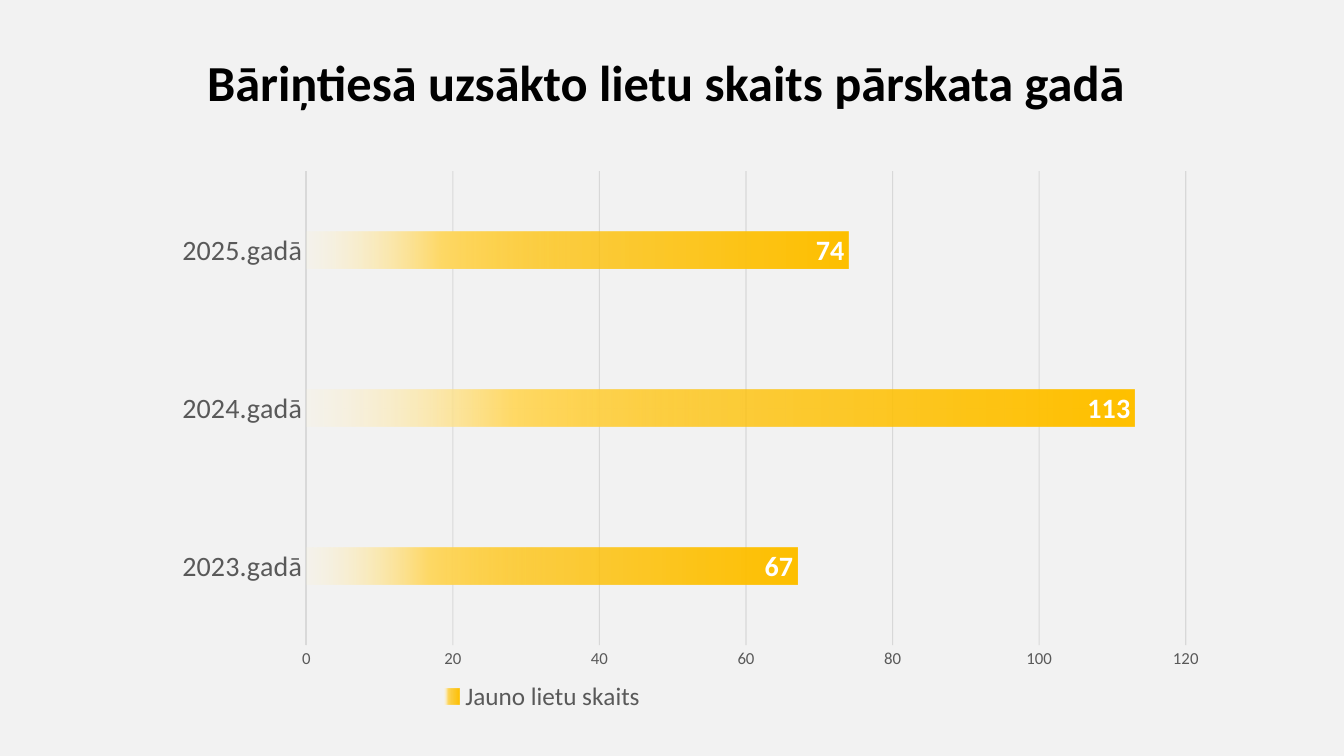
from pptx import Presentation
from pptx.chart.data import CategoryChartData
from pptx.dml.color import RGBColor
from pptx.enum.chart import (XL_CHART_TYPE, XL_LABEL_POSITION,
                             XL_LEGEND_POSITION, XL_TICK_MARK)
from pptx.enum.text import MSO_ANCHOR, MSO_AUTO_SIZE, PP_ALIGN
from pptx.oxml import parse_xml
from pptx.oxml.ns import nsdecls, qn
from pptx.util import Pt

BACKGROUND = RGBColor(0xF2, 0xF2, 0xF2)
BLACK = RGBColor(0, 0, 0)
WHITE = RGBColor(0xFF, 0xFF, 0xFF)
GREY = RGBColor(0x59, 0x59, 0x59)
AXIS = RGBColor(0xD9, 0xD9, 0xD9)
GRID = RGBColor(0xBF, 0xBF, 0xBF)
GOLD = RGBColor(0xFF, 0xC0, 0x00)
LIGHT_GOLD = RGBColor(0xFF, 0xD9, 0x66)
PALE_GOLD = RGBColor(0xFF, 0xF2, 0xCC)

FONT = "Calibri"
# Position %, colour, opacity %
BAR_STOPS = [(0, GOLD, 100), (51, GOLD, 75), (75, LIGHT_GOLD, 100), (100, PALE_GOLD, 15)]
CASES = {"2023.gadā": 67, "2024.gadā": 113, "2025.gadā": 74}


def format_font(font, size, color, bold=False):
    font.name = FONT
    font.size = Pt(size)
    font.bold = bold
    font.color.rgb = color


def write_text(tf, text, size, color, bold=False, align=PP_ALIGN.LEFT, spacing=1.0):
    p = tf.paragraphs[0]
    p.alignment = align
    p.line_spacing = spacing
    r = p.add_run()
    r.text = text
    format_font(r.font, size, color, bold)


def place_layout(parent, index, x, y, w, h, inner=False):
    """Set a manual layout, in fractions of the chart, as child number index."""
    for old in parent.findall(qn("c:layout")):
        parent.remove(old)
    target = '<c:layoutTarget val="inner"/>' if inner else ""
    parent.insert(index, parse_xml(
        f'<c:layout {nsdecls("c")}><c:manualLayout>{target}'
        '<c:xMode val="edge"/><c:yMode val="edge"/>'
        f'<c:x val="{x}"/><c:y val="{y}"/><c:w val="{w}"/><c:h val="{h}"/>'
        '</c:manualLayout></c:layout>'))


def fill_gradient(series):
    """Fade the bars from solid at their ends to clear at the axis."""
    stops = "".join(
        f'<a:gs pos="{pos * 1000}"><a:srgbClr val="{color}">'
        f'<a:alpha val="{opacity * 1000}"/></a:srgbClr></a:gs>'
        for pos, color, opacity in BAR_STOPS)
    sp_pr = series._element.get_or_add_spPr()
    sp_pr.insert(0, parse_xml(
        f'<a:gradFill {nsdecls("a")}><a:gsLst>{stops}</a:gsLst>'
        '<a:lin ang="10800000" scaled="0"/></a:gradFill>'))


def add_title(slide, text, left, top, width, height):
    title = slide.shapes.title
    title.left, title.top, title.width, title.height = (
        Pt(v) for v in (left, top, width, height))
    tf = title.text_frame
    tf.word_wrap = True
    tf.auto_size = MSO_AUTO_SIZE.NONE
    tf.vertical_anchor = MSO_ANCHOR.MIDDLE
    write_text(tf, text, 36, BLACK, bold=True, align=PP_ALIGN.CENTER, spacing=0.9)


def format_axes(chart):
    years, counts = chart.category_axis, chart.value_axis
    for axis, size in ((years, 20), (counts, 12)):
        axis.major_tick_mark = axis.minor_tick_mark = XL_TICK_MARK.NONE
        format_font(axis.tick_labels.font, size, GREY)
    years.format.line.color.rgb = AXIS
    years.format.line.width = Pt(1.5)
    counts.minimum_scale, counts.maximum_scale, counts.major_unit = 0, 120, 20
    counts.format.line.fill.background()
    counts.has_major_gridlines = True
    grid = counts.major_gridlines.format.line
    grid.color.rgb = GRID
    grid.width = Pt(0.75)
    color = next(counts.major_gridlines._xAx.iter(qn("a:srgbClr")))
    color.append(parse_xml(f'<a:alpha {nsdecls("a")} val="50000"/>'))


def add_case_chart(slide, left, top, width, height):
    data = CategoryChartData()
    data.categories = list(CASES)
    data.add_series("Jauno lietu skaits", list(CASES.values()))
    chart = slide.shapes.add_chart(
        XL_CHART_TYPE.BAR_CLUSTERED, Pt(left), Pt(top), Pt(width), Pt(height), data).chart
    format_font(chart.font, 10, BLACK)
    chart.has_title = False
    format_axes(chart)

    plot = chart.plots[0]
    plot.gap_width = 326
    plot.overlap = -58
    plot.vary_by_categories = False
    series = plot.series[0]
    series.invert_if_negative = False
    fill_gradient(series)
    labels = series.data_labels
    labels.show_value = True
    labels.position = XL_LABEL_POSITION.INSIDE_END
    format_font(labels.font, 20, WHITE, bold=True)

    chart.has_legend = True
    legend = chart.legend
    legend.position = XL_LEGEND_POSITION.BOTTOM
    legend.include_in_layout = False
    format_font(legend.font, 18, GREY)
    place_layout(legend._element, 1, 0.26, 0.91, 0.2, 0.07)
    plot_area = chart._chartSpace.chart.plotArea
    place_layout(plot_area, 0, 0.137, 0.021, 0.831, 0.834, inner=True)


def main():
    prs = Presentation()
    prs.slide_width, prs.slide_height = Pt(960), Pt(540)
    slide = prs.slides.add_slide(prs.slide_layouts[5])
    slide.background.fill.solid()
    slide.background.fill.fore_color.rgb = BACKGROUND
    add_title(slide, "Bāriņtiesā uzsākto lietu skaits pārskata gadā ", 66, 28.8, 828, 64.8)
    add_case_chart(slide, 115.2, 113.8, 756, 406)
    prs.save("out.pptx")


if __name__ == "__main__":
    main()
